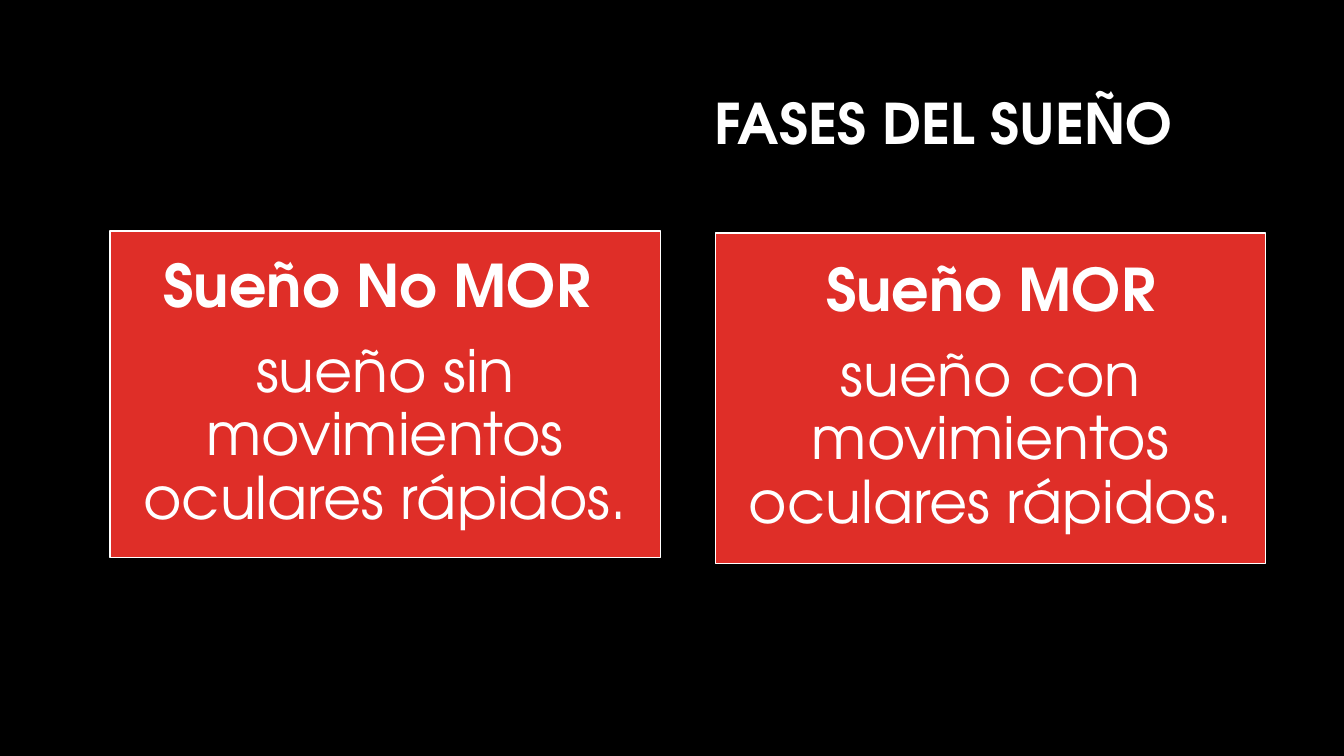
from pptx import Presentation
from pptx.dml.color import RGBColor
from pptx.enum.shapes import MSO_SHAPE
from pptx.enum.text import MSO_ANCHOR, MSO_AUTO_SIZE, PP_ALIGN
from pptx.util import Cm, Pt

FONT = "TeX Gyre Adventor"
WHITE, BLACK, RED = "FFFFFF", "000000", "DF2E28"


def paint(color, value):
    color.rgb = RGBColor.from_string(value)


def fill_solid(fill, value):
    fill.solid()
    paint(fill.fore_color, value)


def place(box):
    return [Cm(v) for v in box]


def add_run(p, text, size, bold):
    r = p.add_run()
    r.text = text
    r.font.name = FONT
    r.font.size = Pt(size)
    r.font.bold = bold
    paint(r.font.color, WHITE)


def add_title(s, box, text):
    sp = s.shapes.title
    sp.left, sp.top, sp.width, sp.height = place(box)
    tf = sp.text_frame
    tf.word_wrap = True
    tf.auto_size = MSO_AUTO_SIZE.NONE
    tf.vertical_anchor = MSO_ANCHOR.MIDDLE
    p = tf.paragraphs[0]
    p.alignment = PP_ALIGN.RIGHT
    p.line_spacing = 0.9
    add_run(p, text, 40, True)


def add_phase(s, box, name, description):
    sp = s.shapes.add_shape(MSO_SHAPE.RECTANGLE, *place(box))
    sp.shadow.inherit = False
    fill_solid(sp.fill, RED)
    paint(sp.line.color, WHITE)
    sp.line.width = Pt(1)
    tf = sp.text_frame
    tf.word_wrap = True
    tf.vertical_anchor = MSO_ANCHOR.MIDDLE
    tf.margin_left = tf.margin_right = tf.margin_top = tf.margin_bottom = Cm(0.43)
    for i, (text, bold) in enumerate([(name, True), (description, False)]):
        p = tf.add_paragraph() if i else tf.paragraphs[0]
        p.alignment = PP_ALIGN.CENTER
        p.line_spacing = 0.9
        p.space_after = Pt(15)
        add_run(p, text, 42, bold)


def main():
    prs = Presentation()
    prs.slide_width, prs.slide_height = Cm(33.87), Cm(19.05)
    s = prs.slides.add_slide(prs.slide_layouts[5])
    fill_solid(s.background.fill, BLACK)
    add_title(s, (5.89, 1.4, 23.93, 3.58), "FASES DEL SUEÑO")
    add_phase(s, (2.77, 5.82, 13.87, 8.23), "Sueño No MOR ",
              "sueño sin movimientos oculares rápidos.")
    add_phase(s, (18.03, 5.87, 13.87, 8.33), "Sueño MOR",
              "sueño con movimientos oculares rápidos.")
    prs.save("out.pptx")


if __name__ == "__main__":
    main()
